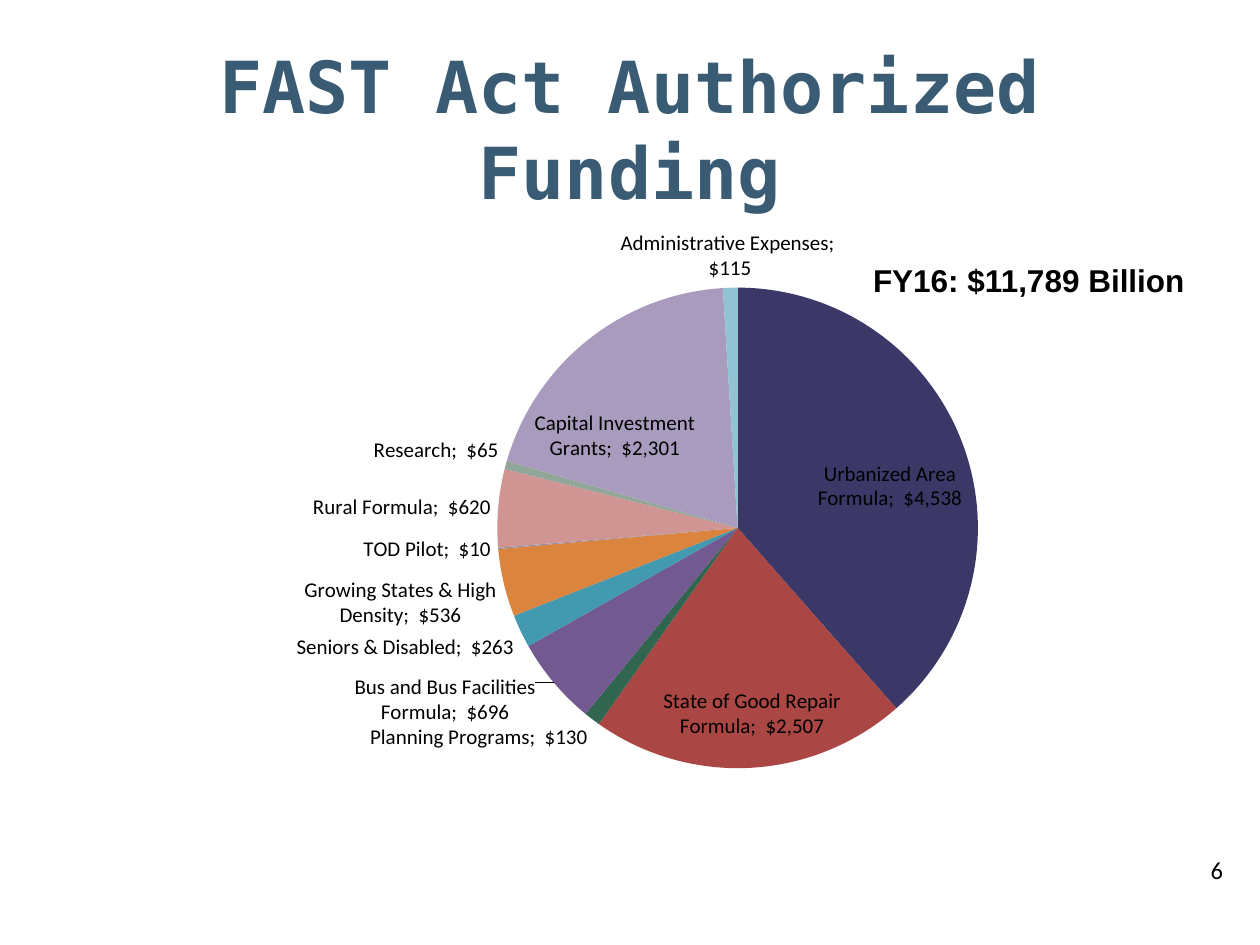
from dataclasses import dataclass
from typing import Any

from lxml import etree
from pptx import Presentation
from pptx.chart.data import CategoryChartData
from pptx.dml.color import RGBColor
from pptx.enum.chart import XL_CHART_TYPE, XL_LABEL_POSITION
from pptx.enum.text import MSO_ANCHOR, PP_ALIGN
from pptx.oxml.ns import qn
from pptx.util import Pt

PIE = XL_CHART_TYPE.PIE
BEST_FIT = XL_LABEL_POSITION.BEST_FIT
LEFT, CENTER = PP_ALIGN.LEFT, PP_ALIGN.CENTER
TOP, MIDDLE = MSO_ANCHOR.TOP, MSO_ANCHOR.MIDDLE

COLORS = {
    "text": "000000",
    "title": "395B74",
    "navy": "3B3868",
    "red": "AA4744",
    "green": "30664F",
    "purple": "725990",
    "teal": "4299B0",
    "orange": "DB843D",
    "light_navy": "8E8DAA",
    "light_red": "D09493",
    "light_green": "91A699",
    "light_purple": "A99BBD",
    "light_teal": "91C3D5",
}


@dataclass(frozen=True)
class Label:
    text: str
    box: tuple[float, float, float, float]
    size: float
    font: str
    color: str = "text"
    bold: bool = False
    align: Any = LEFT
    anchor: Any = TOP
    wrap: bool = True


@dataclass(frozen=True)
class Program:
    name: str
    amount: int
    color: str


LABELS = [
    Label("FAST Act Authorized Funding", (36, 34.5, 648, 77), 41,
          "DejaVu Sans Mono", "title", True, CENTER, MIDDLE),
    Label("FY16: $11,789 Billion", (491.8, 145.5, 194.4, 29), 18, "Arial",
          bold=True, wrap=False),
    Label("6", (684.7, 485.3, 41.8, 54), 14, "Calibri"),
]

PROGRAMS = [
    Program("Urbanized Area Formula", 4538, "navy"),
    Program("State of Good Repair Formula", 2507, "red"),
    Program("Planning Programs", 130, "green"),
    Program("Bus and Bus Facilities Formula", 696, "purple"),
    Program("Seniors & Disabled", 263, "teal"),
    Program("Growing States & High Density", 536, "orange"),
    Program("TOD Pilot", 10, "light_navy"),
    Program("Rural Formula", 620, "light_red"),
    Program("Research", 65, "light_green"),
    Program("Capital Investment Grants", 2301, "light_purple"),
    Program("Administrative Expenses", 115, "light_teal"),
]

CHART_BOX = (36, 121, 648, 361.4)
PLOT_LAYOUT = {
    "layoutTarget": "inner",
    "xMode": "edge",
    "yMode": "edge",
    "x": 0.38,
    "y": 0.12,
    "w": 0.43,
    "h": 0.76,
}


def rgb(name: str) -> RGBColor:
    return RGBColor.from_string(COLORS[name])


def set_attributes(target: Any, values: dict[str, Any]) -> None:
    for name, value in values.items():
        setattr(target, name, value)


def format_font(font: Any, name: str, size: float, color: str, bold: bool) -> None:
    set_attributes(font, {"name": name, "size": Pt(size), "bold": bold})
    font.color.rgb = rgb(color)


def add_label(s: Any, label: Label) -> None:
    sp = s.shapes.add_textbox(*map(Pt, label.box))
    tf = sp.text_frame
    set_attributes(tf, {"word_wrap": label.wrap, "vertical_anchor": label.anchor})
    p = tf.paragraphs[0]
    p.alignment = label.align
    r = p.add_run()
    r.text = label.text
    format_font(r.font, label.font, label.size, label.color, label.bold)


def place_plot(chart: Any, values: dict[str, Any]) -> None:
    plot_area = chart.plots[0]._element.getparent()
    for old in plot_area.findall(qn("c:layout")):
        plot_area.remove(old)
    layout = etree.Element(qn("c:layout"))
    manual = etree.SubElement(layout, qn("c:manualLayout"))
    for name, value in values.items():
        etree.SubElement(manual, qn(f"c:{name}")).set("val", str(value))
    plot_area.insert(0, layout)


def add_funding_pie(s: Any, programs: list[Program]) -> None:
    data = CategoryChartData()
    data.categories = [program.name for program in programs]
    data.add_series("Series 1", [program.amount for program in programs])
    chart = s.shapes.add_chart(PIE, *map(Pt, CHART_BOX), data).chart
    set_attributes(chart, {"has_legend": False, "has_title": False})
    format_font(chart.font, "Calibri", 18, "text", False)
    chart.plots[0].vary_by_categories = True
    place_plot(chart, PLOT_LAYOUT)

    series = chart.plots[0].series[0]
    for index, program in enumerate(programs):
        point = series.points[index].format
        point.fill.solid()
        point.fill.fore_color.rgb = rgb(program.color)
        point.line.fill.background()

    labels = series.data_labels
    set_attributes(labels, {
        "show_value": True,
        "show_category_name": True,
        "show_percentage": False,
        "number_format": '_("$"#,##0',
        "number_format_is_linked": False,
        "position": BEST_FIT,
    })
    format_font(labels.font, "Calibri", 12, "text", False)


def main() -> None:
    prs = Presentation()
    set_attributes(prs, {"slide_width": Pt(720), "slide_height": Pt(540)})
    s = prs.slides.add_slide(prs.slide_layouts[6])
    add_funding_pie(s, PROGRAMS)
    for label in LABELS:
        add_label(s, label)
    prs.save("out.pptx")


if __name__ == "__main__":
    main()
